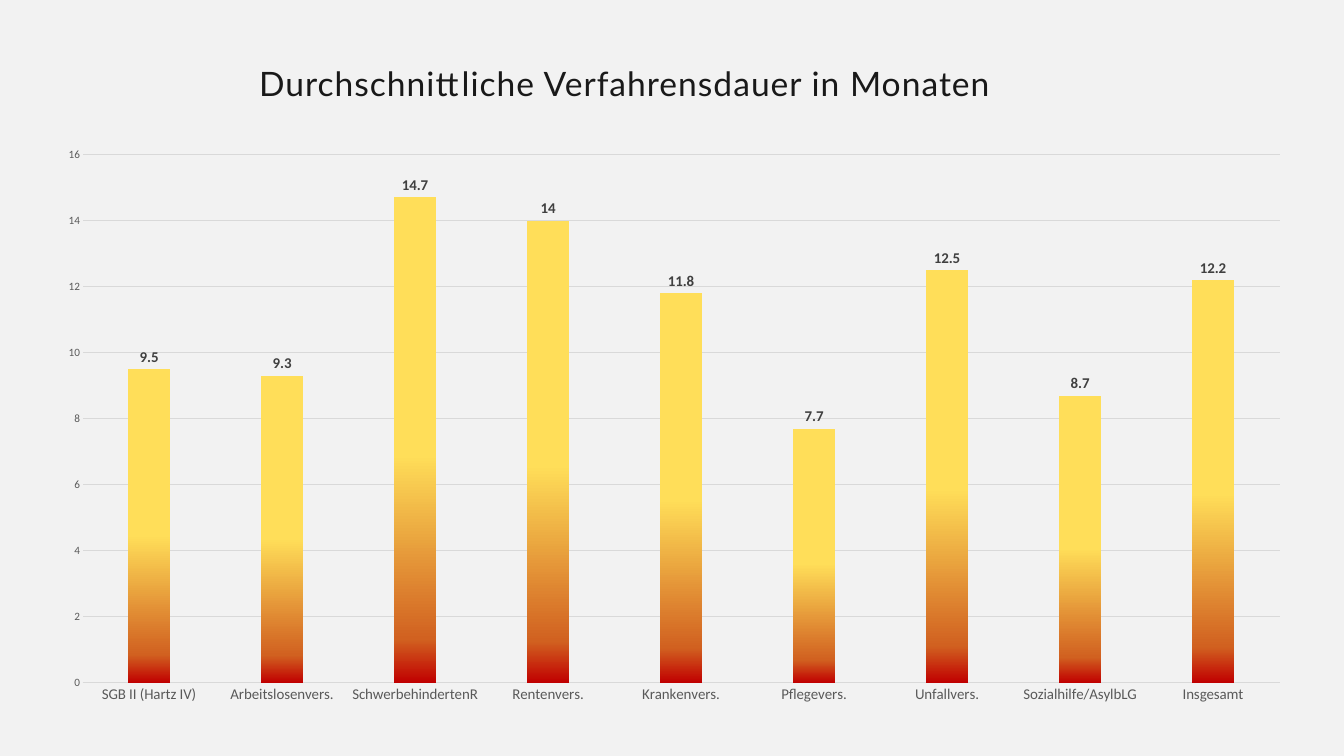
from lxml import etree
from pptx import Presentation
from pptx import util as u
from pptx.chart.data import CategoryChartData
from pptx.dml.color import RGBColor
from pptx.enum import chart as c, text
from pptx.oxml import parse_xml
from pptx.oxml.ns import nsdecls, qn

DURATIONS = {
    "SGB II (Hartz IV)": 9.5,
    "Arbeitslosenvers.": 9.3,
    "SchwerbehindertenR": 14.7,
    "Rentenvers.": 14,
    "Krankenvers.": 11.8,
    "Pflegevers.": 7.7,
    "Unfallvers.": 12.5,
    "Sozialhilfe/AsylbLG": 8.7,
    "Insgesamt": 12.2,
}
COLUMN_STOPS = [(0, "C00000"), (9, "D16120"), (47, "FFDE59")]
PLOT_AREA = {"x": 0.03, "y": 0.03, "w": 0.95, "h": 0.91}
GRID_COLOR = "D9D9D9"


def rgb(value):
    return RGBColor.from_string(value)


def style_font(font, name, size, color, bold=False):
    font.name = name
    font.size = u.Pt(size)
    font.bold = bold
    font.color.rgb = rgb(color)


def style_line(line):
    line.color.rgb = rgb(GRID_COLOR)
    line.width = u.Pt(0.75)


def fill_upwards(series, stops):
    """Fill the columns with a gradient that runs from bottom to top."""
    stop_xml = "".join(
        f'<a:gs pos="{percent * 1000}"><a:srgbClr val="{color}"/></a:gs>'
        for percent, color in stops)
    series._element.get_or_add_spPr().insert(0, parse_xml(
        f'<a:gradFill {nsdecls("a")} rotWithShape="1"><a:gsLst>{stop_xml}</a:gsLst>'
        '<a:lin ang="16200000" scaled="0"/></a:gradFill>'))


def place_plot_area(chart, fractions):
    """Fix the inner plot area as fractions of the chart."""
    plot_area = chart._chartSpace.find(f'.//{qn("c:plotArea")}')
    for layout in plot_area.findall(qn("c:layout")):
        plot_area.remove(layout)
    layout = etree.Element(qn("c:layout"))
    manual = etree.SubElement(layout, qn("c:manualLayout"))
    settings = {"layoutTarget": "inner", "xMode": "edge", "yMode": "edge", **fractions}
    for tag, value in settings.items():
        etree.SubElement(manual, qn(f"c:{tag}")).set("val", str(value))
    plot_area.insert(0, layout)


def add_title(slide, left, top, width, height):
    box = slide.shapes.add_textbox(u.Pt(left), u.Pt(top), u.Pt(width), u.Pt(height))
    frame = box.text_frame
    frame.word_wrap = True
    frame.auto_size = text.MSO_AUTO_SIZE.SHAPE_TO_FIT_TEXT
    frame.margin_left = frame.margin_right = u.Pt(0)
    frame.margin_top = frame.margin_bottom = u.Pt(0)
    paragraph = frame.paragraphs[0]
    paragraph.line_spacing = u.Pt(47.2)
    run = paragraph.add_run()
    run.text = "Durchschnittliche Verfahrensdauer in Monaten"
    style_font(run.font, "Lato", 36, "191919")
    run._r.get_or_add_rPr().set("spc", "110")  # letter spacing


def add_duration_chart(slide, left, top, width, height):
    data = CategoryChartData()
    data.categories = list(DURATIONS)
    data.add_series("Series 1", list(DURATIONS.values()))
    chart = slide.shapes.add_chart(
        c.XL_CHART_TYPE.COLUMN_CLUSTERED,
        u.Pt(left), u.Pt(top), u.Pt(width), u.Pt(height), data).chart
    chart.has_legend = False
    chart.has_title = False
    style_font(chart.font, "Calibri", 10, "000000")
    place_plot_area(chart, PLOT_AREA)

    # Columns
    plot = chart.plots[0]
    plot.gap_width = 219
    plot.overlap = -27
    plot.vary_by_categories = False
    series = plot.series[0]
    fill_upwards(series, COLUMN_STOPS)

    # Value labels
    labels = series.data_labels
    labels.show_value = True
    labels.position = c.XL_LABEL_POSITION.OUTSIDE_END
    style_font(labels.font, "Calibri", 16, "404040", bold=True)

    # Axes and gridlines
    for axis, size in ((chart.category_axis, 16), (chart.value_axis, 12)):
        axis.major_tick_mark = axis.minor_tick_mark = c.XL_TICK_MARK.NONE
        style_font(axis.tick_labels.font, "Calibri", size, "595959")
    style_line(chart.category_axis.format.line)
    value_axis = chart.value_axis
    value_axis.format.line.fill.background()
    value_axis.minimum_scale = 0
    value_axis.maximum_scale = 16
    value_axis.major_unit = 2
    value_axis.has_major_gridlines = True
    style_line(value_axis.major_gridlines.format.line)


def main():
    presentation = Presentation()
    presentation.slide_width = u.Pt(1440)
    presentation.slide_height = u.Pt(810)
    slide = presentation.slides.add_slide(presentation.slide_layouts[6])
    slide.background.fill.solid()
    slide.background.fill.fore_color.rgb = rgb("F2F2F2")

    add_duration_chart(slide, 48, 147, 1350, 622)
    add_title(slide, 277.5, 63.5, 891, 47.5)
    presentation.save("out.pptx")


if __name__ == "__main__":
    main()
